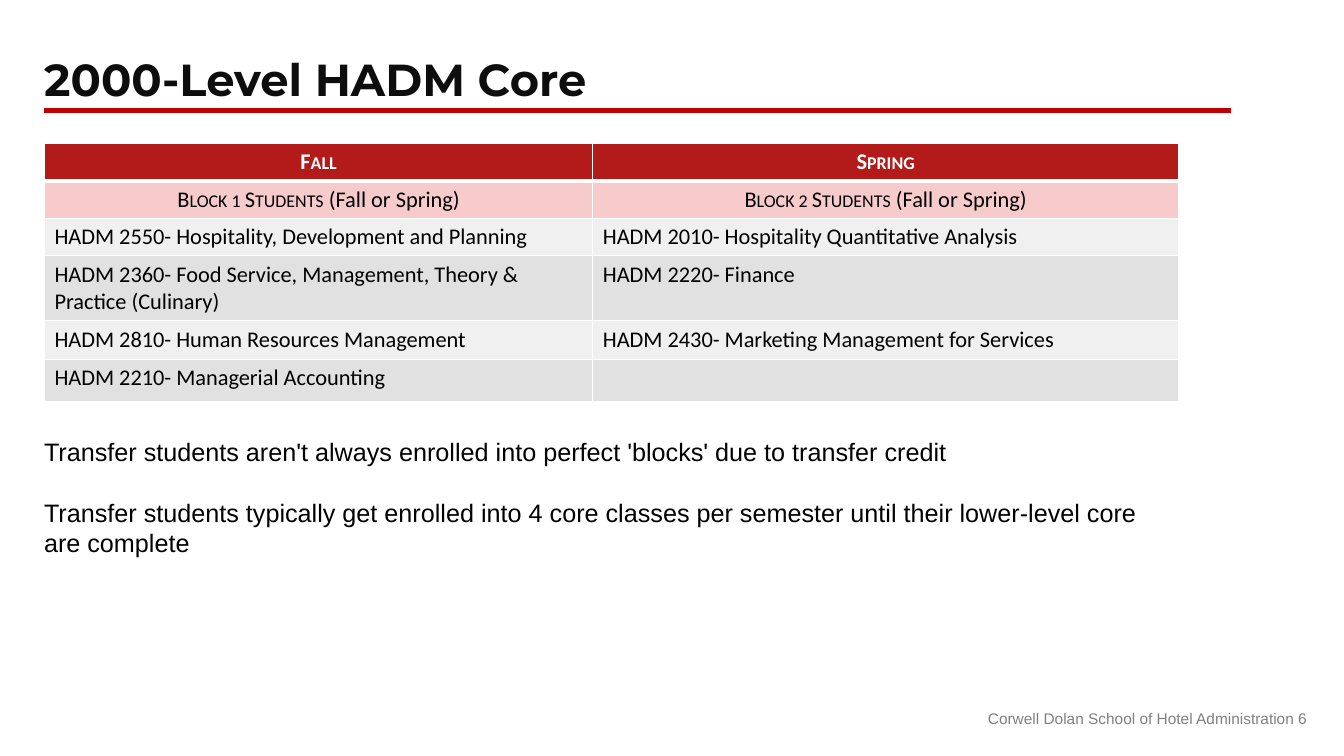
from lxml.etree import SubElement
from pptx import Presentation
from pptx.dml.color import RGBColor
from pptx.enum.shapes import MSO_CONNECTOR
from pptx.enum.text import MSO_ANCHOR, MSO_AUTO_SIZE, PP_ALIGN
from pptx.oxml.ns import qn
from pptx.util import Cm, Pt

COLORS = {
    "title": "0D0D0D", "rule": "C00000", "footer": "808080",
    "black": "000000", "white": "FFFFFF",
    "header": "B31B1B", "block": "F7CBCC", "light": "F0F0F0", "dark": "E1E1E1",
}


def rgb(name):
    return RGBColor.from_string(COLORS[name])


class SlideBuilder:
    heading_font, body_font, table_font = "Montserrat", "Arial", "Calibri"
    table_size = 16

    def __init__(self, prs):
        self.slide = prs.slides.add_slide(prs.slide_layouts[5])

    def format_run(self, r, font, size, color, bold=False, small_caps=False):
        r.font.name = font
        r.font.size = Pt(size)
        r.font.bold = bold
        r.font.color.rgb = rgb(color)
        if small_caps:
            r.font._element.set("cap", "small")

    def fill_text(self, sp, paragraphs, font, size, color, bold=False,
                  align=PP_ALIGN.LEFT, gap=0):
        tf = sp.text_frame
        tf.text = "\n".join(paragraphs)
        tf.word_wrap = True
        tf.auto_size = MSO_AUTO_SIZE.NONE
        tf.vertical_anchor = MSO_ANCHOR.TOP
        for i, p in enumerate(tf.paragraphs):
            p.alignment = align
            p.space_before = Pt(gap if i else 0)
            for r in p.runs:
                self.format_run(r, font, size, color, bold)

    def title(self, text, left, top, width, height):
        sp = self.slide.shapes.title
        sp.left, sp.top, sp.width, sp.height = Cm(left), Cm(top), Cm(width), Cm(height)
        self.fill_text(sp, [text], self.heading_font, 32, "title", bold=True)

    def text(self, paragraphs, left, top, width, height, size, color, **style):
        sp = self.slide.shapes.add_textbox(Cm(left), Cm(top), Cm(width), Cm(height))
        self.fill_text(sp, paragraphs, self.body_font, size, color, **style)

    def rule(self, left, right, y, color, weight):
        line = self.slide.shapes.add_connector(
            MSO_CONNECTOR.STRAIGHT, Cm(left), Cm(y), Cm(right), Cm(y))
        line.line.color.rgb = rgb(color)
        line.line.width = Pt(weight)
        SubElement(line._element.spPr, qn("a:effectLst"))

    def borders(self, cell, **weights):
        tcPr = cell._tc.get_or_add_tcPr()
        for i, side in enumerate("LRTB"):
            ln = SubElement(tcPr, qn(f"a:ln{side}"), w=str(Pt(weights.get(side, 1))))
            fill = SubElement(ln, qn("a:solidFill"))
            SubElement(fill, qn("a:srgbClr"), val=COLORS["white"])
            tcPr.insert(i, ln)

    def table(self, rows, fills, left, top, widths, heights):
        table = self.slide.shapes.add_table(
            len(rows), len(widths), Cm(left), Cm(top),
            Cm(sum(widths)), Cm(sum(heights))).table
        for column, width in zip(table.columns, widths):
            column.width = Cm(width)
        for i, (row, height) in enumerate(zip(rows, heights)):
            table.rows[i].height = Cm(height)
            for j, parts in enumerate(row):
                cell = table.cell(i, j)
                cell.fill.solid()
                cell.fill.fore_color.rgb = rgb(fills[i])
                # A heavier line separates the header from the body
                self.borders(cell, T=3 if i == 1 else 1, B=3 if i == 0 else 1)
                p = cell.text_frame.paragraphs[0]
                p.alignment = PP_ALIGN.CENTER if i < 2 else PP_ALIGN.LEFT
                p.font.size = Pt(self.table_size)
                for k, part in enumerate(parts):
                    r = p.add_run()
                    r.text = part
                    self.format_run(r, self.table_font, self.table_size,
                                    "black" if i else "white", bold=i == 0,
                                    small_caps=i < 2 and k == 0)


def main():
    prs = Presentation()
    prs.slide_width, prs.slide_height = Cm(33.87), Cm(19.05)
    s = SlideBuilder(prs)

    # Heading
    s.title("2000-Level HADM Core", 0.86, 1.17, 27.94, 1.63)
    s.rule(1.12, 31.01, 2.79, "rule", 3.5)

    # Footer
    s.text(["Corwell Dolan School of Hotel Administration 6"],
           11.56, 17.75, 21.64, 1.02, 11, "footer", align=PP_ALIGN.RIGHT)

    # Courses by semester; each cell is a list of text parts
    courses = [
        (["Fall"], ["Spring"]),
        (["Block 1 Students", " (Fall or Spring)"],
         ["Block 2 Students", " (Fall or Spring)"]),
        (["HADM 2550- Hospitality, Development and Planning"],
         ["HADM 2010- Hospitality Quantitative Analysis"]),
        (["HADM 2360- Food Service, Management, Theory & Practice (Culinary)"],
         ["HADM 2220- Finance"]),
        (["HADM 2810- Human Resources Management"],
         ["HADM 2430- Marketing Management for Services"]),
        (["HADM 2210- Managerial Accounting"], []),
    ]
    s.table(courses, ["header", "block"] + ["light", "dark"] * 2, 1.12, 3.61,
            widths=[13.82, 14.76], heights=[0.94, 0.94, 0.94, 1.63, 0.97, 1.07])

    # Notes on transfer students
    s.text(["Transfer students aren't always enrolled into perfect 'blocks' "
            "due to transfer credit",
            "Transfer students typically get enrolled into 4 core classes per "
            "semester until their lower-level core are complete"],
           0.86, 10.87, 28.5, 3.33, 18, "black", gap=22)

    prs.save("out.pptx")


if __name__ == "__main__":
    main()
